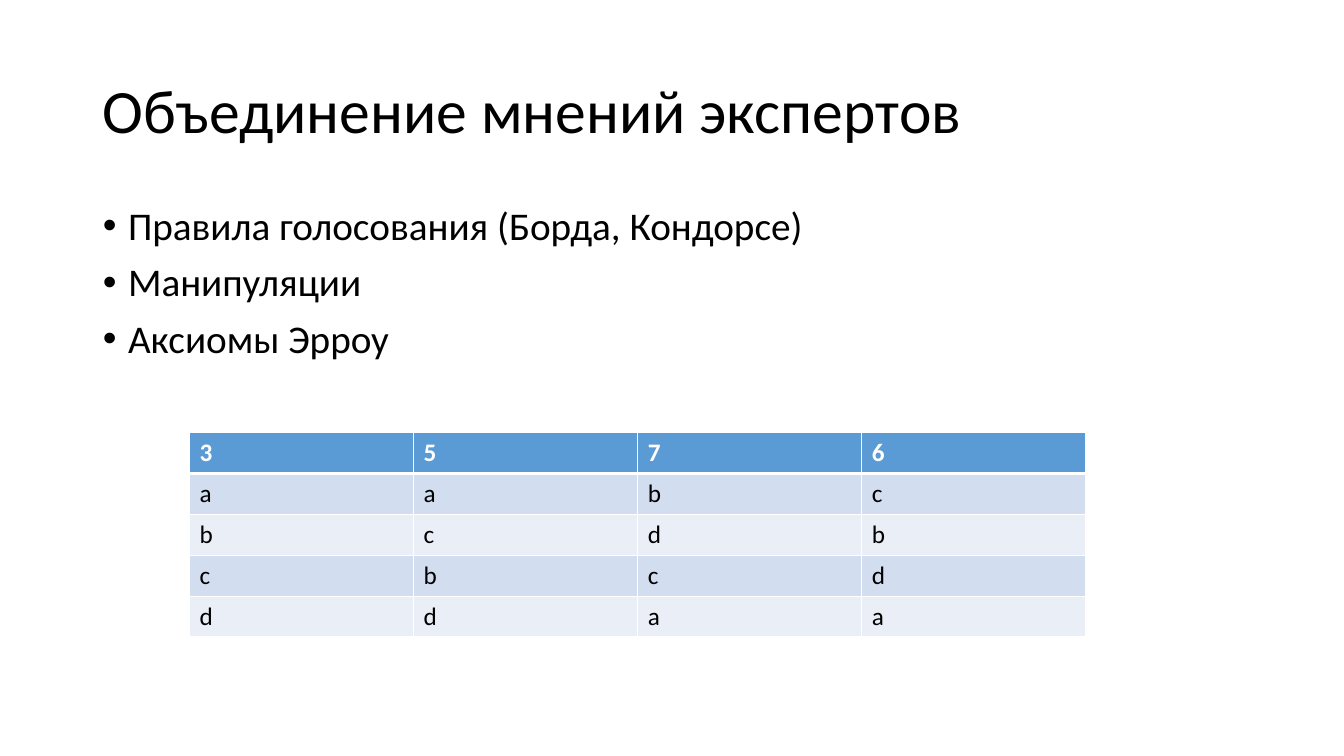
from lxml.etree import SubElement
from pptx import Presentation
from pptx.dml.color import RGBColor
from pptx.enum.text import MSO_ANCHOR as Anchor, MSO_AUTO_SIZE as AutoSize, PP_ALIGN as Align
from pptx.oxml.ns import qn
from pptx.util import Inches, Pt

FONT = "Calibri"
BLACK = RGBColor(0x00, 0x00, 0x00)
WHITE = RGBColor(0xFF, 0xFF, 0xFF)
HEADER_BLUE = RGBColor(0x5B, 0x9B, 0xD5)
BAND_DARK = RGBColor(0xD2, 0xDE, 0xEF)
BAND_LIGHT = RGBColor(0xEA, 0xEF, 0xF7)

TITLE = "Объединение мнений экспертов"
TOPICS = ["Правила голосования (Борда, Кондорсе)", "Манипуляции", "Аксиомы Эрроу"]
VOTES = ["3567", "aabc", "bcdb", "cbcd", "ddaa"]
VOTES[0] = "3576"


def add_run(paragraph, text, size, color=BLACK, bold=False):
    run = paragraph.add_run()
    run.text = text
    run.font.name = FONT
    run.font.size = Pt(size)
    run.font.bold = bold
    run.font.color.rgb = color


def place(shape, left, top, width, height, anchor):
    shape.left, shape.top = Inches(left), Inches(top)
    shape.width, shape.height = Inches(width), Inches(height)
    frame = shape.text_frame
    frame.auto_size = AutoSize.NONE
    frame.word_wrap = True
    frame.vertical_anchor = anchor
    return frame


def fill_title(shape):
    paragraph = place(shape, 0.92, 0.4, 11.5, 1.45, Anchor.MIDDLE).paragraphs[0]
    paragraph.alignment = Align.LEFT
    paragraph.line_spacing = 0.9
    add_run(paragraph, TITLE, 44)


def set_bullet(paragraph):
    properties = paragraph._p.get_or_add_pPr()
    properties.set("marL", str(Inches(0.25)))
    properties.set("indent", str(-Inches(0.25)))
    SubElement(properties, qn("a:buFont"), typeface="Arial")
    SubElement(properties, qn("a:buChar"), char="•")


def fill_topics(shape):
    frame = place(shape, 0.92, 2, 11.5, 1.91, Anchor.TOP)
    for index, topic in enumerate(TOPICS):
        paragraph = frame.add_paragraph() if index else frame.paragraphs[0]
        paragraph.alignment = Align.LEFT
        paragraph.line_spacing = 0.9
        paragraph.space_before = Pt(10)
        paragraph.space_after = Pt(0)
        set_bullet(paragraph)
        add_run(paragraph, topic, 28)


def set_borders(cell, top, bottom):
    properties = cell._tc.get_or_add_tcPr()
    for side, width in (("L", 1), ("R", 1), ("T", top), ("B", bottom)):
        line = SubElement(properties, qn(f"a:ln{side}"), w=str(Pt(width)))
        fill = SubElement(line, qn("a:solidFill"))
        SubElement(fill, qn("a:srgbClr"), val=str(WHITE))


def add_votes_table(slide):
    frame = slide.shapes.add_table(
        len(VOTES), len(VOTES[0]), Inches(1.88), Inches(4.29), Inches(8.89), Inches(2.03))
    for row, letters in enumerate(VOTES):
        header = row == 0
        band = HEADER_BLUE if header else BAND_DARK if row % 2 else BAND_LIGHT
        for column, letter in enumerate(letters):
            cell = frame.table.cell(row, column)
            set_borders(cell, 3 if row == 1 else 1, 3 if header else 1)
            cell.fill.solid()
            cell.fill.fore_color.rgb = band
            add_run(cell.text_frame.paragraphs[0], letter, 18, WHITE if header else BLACK, header)


def main():
    presentation = Presentation()
    presentation.slide_width = Inches(13.33)
    presentation.slide_height = Inches(7.5)
    slide = presentation.slides.add_slide(presentation.slide_layouts[1])
    fill_title(slide.shapes.title)
    fill_topics(slide.placeholders[1])
    add_votes_table(slide)
    presentation.save("out.pptx")


if __name__ == "__main__":
    main()
